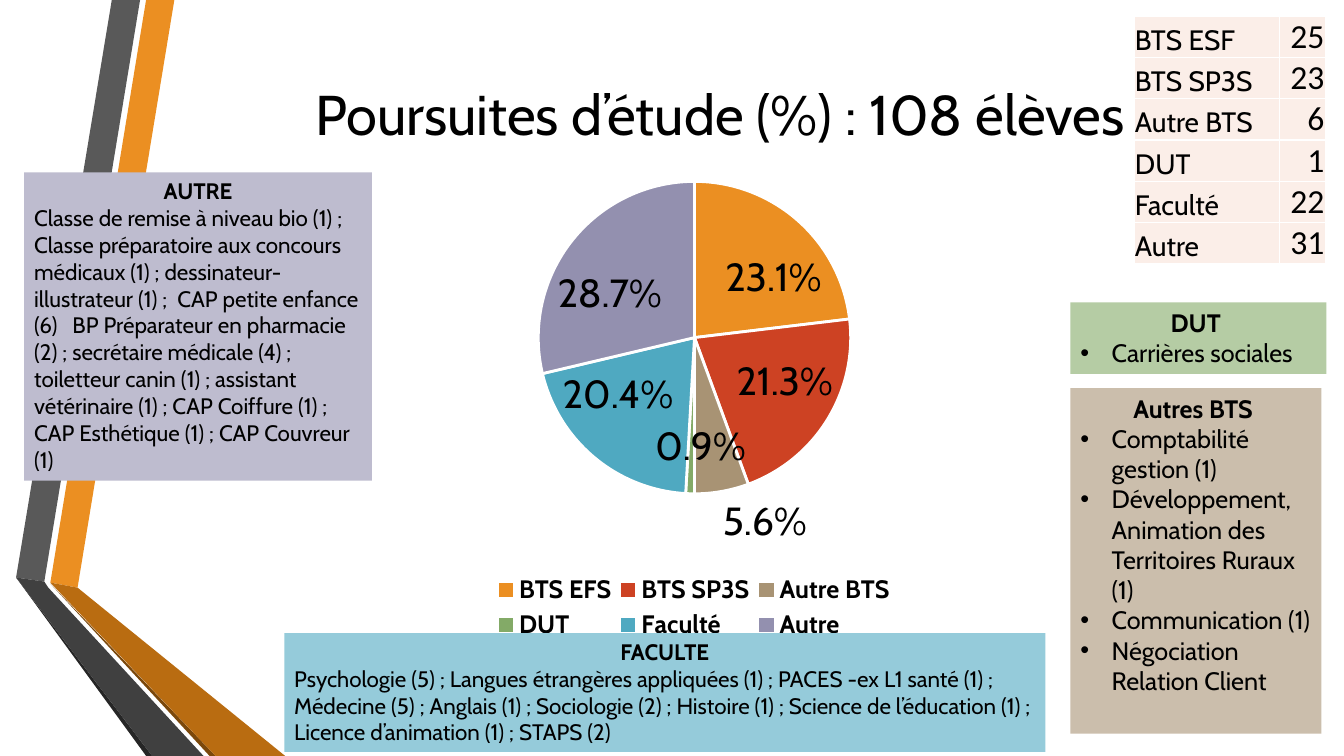
from lxml.etree import SubElement
from pptx import Presentation
from pptx.chart.data import CategoryChartData
from pptx.dml.color import RGBColor
from pptx.enum.chart import XL_CHART_TYPE as ChartType, XL_LABEL_POSITION as LabelPos, XL_LEGEND_POSITION as LegendPos
from pptx.enum.shapes import MSO_SHAPE as Preset
from pptx.enum.text import MSO_ANCHOR as Anchor, MSO_AUTO_SIZE as AutoSize, PP_ALIGN as Align
from pptx.oxml.ns import qn
from pptx.util import Inches, Pt

BANDS = [
    ("EB8F22", [(0.5, 5.78), (0.77, 5.83), (1.73, 0), (1.45, 0)]),
    ("595959", [(1.39, 0), (1.11, 0), (0.16, 5.73), (0.44, 5.77)]),
    ("262626", [(0.16, 5.73), (1.45, 7.5), (1.51, 7.5)]),
    ("7B480B", [(0.5, 5.79), (2.08, 7.5), (2.14, 7.5)]),
    ("B96C11", [(0.5, 5.78), (2.14, 7.5), (2.83, 7.5), (0.77, 5.83)]),
    ("404040", [(2.02, 7.5), (0.48, 5.83), (0.44, 5.77), (0.16, 5.73), (1.51, 7.5)]),
]
COUNTS = [("BTS ESF", 25), ("BTS SP3S", 23), ("Autre BTS", 6), ("DUT", 1), ("Faculté", 22), ("Autre", 31)]
SHARES = [
    ("BTS EFS", 23.1, "EB8F22", LabelPos.INSIDE_END, (0.27, 0.28)),
    ("BTS SP3S", 21.3, "CD4223", LabelPos.INSIDE_END, (0.1, -0.11)),
    ("Autre BTS", 5.6, "A89374", LabelPos.OUTSIDE_END, None),
    ("DUT", 0.9, "83AA67", LabelPos.INSIDE_END, (0.1, -0.18)),
    ("Faculté", 20.4, "4FA9C1", LabelPos.INSIDE_END, (-0.35, -0.35)),
    ("Autre ", 28.7, "9390AF", LabelPos.INSIDE_END, (-0.19, 0.25)),
]
DETAILS = [
    ((0.24, 1.71, 3.45, 3.06), "BEBCCF", 16, False, "AUTRE", [
        "Classe de remise à niveau bio (1) ; Classe préparatoire aux concours médicaux (1) ; "
        "dessinateur-illustrateur (1) ;  CAP petite enfance (6)   BP Préparateur en pharmacie (2) ; "
        "secrétaire médicale (4) ; toiletteur canin (1) ; assistant vétérinaire (1) ; "
        "CAP Coiffure (1) ; CAP Esthétique (1) ; CAP Couvreur (1)"]),
    ((10.62, 3.85, 2.49, 3.43), "CBBEAC", 18, True, "Autres BTS ", [
        "Comptabilité gestion (1)", "Développement, Animation des Territoires Ruraux (1)",
        "Communication (1)", "Négociation Relation Client"]),
    ((2.82, 6.28, 7.55, 1.18), "95CBDA", 16, False, "FACULTE", [
        "Psychologie (5) ; Langues étrangères appliquées (1) ; PACES -ex L1 santé (1) ; "
        "Médecine (5) ; Anglais (1) ; Sociologie (2) ; Histoire (1) ; "
        "Science de l’éducation (1) ; Licence d’animation (1) ; STAPS (2)"]),
    ((10.62, 3, 2.54, 0.71), "B5CCA4", 18, True, "DUT ", ["Carrières sociales"]),
]


def paint(fill, color):
    """Fill with a solid hex colour."""
    fill.solid()
    fill.fore_color.rgb = RGBColor.from_string(color)


def style(font, size, name="Cabin", bold=False):
    """Apply the black text format to a font."""
    for key, value in {"size": Pt(size), "name": name, "bold": bold}.items():
        setattr(font, key, value)
    font.color.rgb = RGBColor.from_string("000000")


def add_bands(slide):
    """Draw the folded ribbons on the left."""
    for color, corners in BANDS:
        start, *others = [(Inches(x), Inches(y)) for x, y in corners]
        builder = slide.shapes.build_freeform(*start)
        builder.add_line_segments(others)
        band = builder.convert_to_shape()
        band.shadow.inherit = False
        paint(band.fill, color)
        band.line.fill.background()


def add_title(slide, box):
    """Place the heading in the title placeholder."""
    heading = slide.shapes.title
    for key, value in zip(("left", "top", "width", "height"), box):
        setattr(heading, key, Inches(value))
    frame = heading.text_frame
    frame.text = "Poursuites d’étude (%) : 108 élèves"
    frame.auto_size, frame.vertical_anchor = AutoSize.NONE, Anchor.MIDDLE
    frame.paragraphs[0].alignment = Align.CENTER
    style(frame.paragraphs[0].runs[0].font, 40)


def set_layout(part, index, chart_size, lengths, **modes):
    """Lay out a chart part by lengths in inches within the chart."""
    for old in part.findall(qn("c:layout")):
        part.remove(old)
    layout = part.makeelement(qn("c:layout"))
    manual = SubElement(layout, qn("c:manualLayout"))
    for key, mode in modes.items():
        SubElement(manual, qn(f"c:{key}"), val=mode)
    for key, length, whole in zip("xywh", lengths, chart_size * 2):
        SubElement(manual, qn(f"c:{key}"), val=f"{length / whole:.4f}")
    part.insert(index, layout)


def add_shares(slide, box):
    """Draw the pie of shares with its legend."""
    data = CategoryChartData(number_format="0.0")
    data.categories = [name for name, *_ in SHARES]
    data.add_series("Series 1", [share for _, share, *_ in SHARES])
    chart = slide.shapes.add_chart(ChartType.PIE, *map(Inches, box), data).chart
    style(chart.font, 10)
    chart.has_title = False
    chart.has_legend = True
    legend = chart.legend
    legend.position, legend.include_in_layout = LegendPos.BOTTOM, False
    style(legend.font, 18, bold=True)
    plot = chart.plots[0]
    plot.vary_by_categories = True
    series = plot.series[0]
    labels = series.data_labels
    for key, value in {"show_value": True, "number_format": "0.0", "number_format_is_linked": False}.items():
        setattr(labels, key, value)
    style(labels.font, 28, bold=True)
    size = box[2:]
    for index, (_, share, color, position, offset) in enumerate(SHARES):
        point = series.points[index]
        paint(point.format.fill, color)
        paint(point.format.line.fill, "FFFFFF")
        point.format.line.width = Pt(2)
        label = point.data_label
        label.text_frame.text = f"{share}%"
        style(label.text_frame.paragraphs[0].runs[0].font, 28)
        label.position = position
        if offset:
            entry = labels._element.findall(qn("c:dLbl"))[index]
            set_layout(entry, 1, size, offset)
    edges = {"xMode": "edge", "yMode": "edge"}
    area, key = (chart.element.find(".//" + qn(tag)) for tag in ("c:plotArea", "c:legend"))
    set_layout(area, 0, size, (2.52, 0.43, 3.1, 3.1), layoutTarget="inner", **edges)
    set_layout(key, 1, size, (2.03, 4.28, 4.07, 0.75), **edges)


def add_counts(slide, box):
    """Build the table of student counts."""
    table = slide.shapes.add_table(len(COUNTS), 2, *map(Inches, box)).table
    table.first_row = table.horz_banding = False
    for column, width in zip(table.columns, (1.44, 0.46)):
        column.width = Inches(width)
    looks = [(Align.LEFT, 20, "Cabin"), (Align.RIGHT, 24, "Calibri")]
    cell_format = {
        "margin_left": Inches(0.01), "margin_right": Inches(0.01),
        "margin_top": 0, "margin_bottom": 0, "vertical_anchor": Anchor.BOTTOM,
    }
    for row, values in enumerate(COUNTS):
        for column, (value, (align, size, font)) in enumerate(zip(values, looks)):
            cell = table.cell(row, column)
            for key, setting in cell_format.items():
                setattr(cell, key, setting)
            cell.text = str(value)
            paragraph = cell.text_frame.paragraphs[0]
            paragraph.alignment = align
            style(paragraph.runs[0].font, size, font)
            paint(cell.fill, "FBEEE8")


def add_detail(slide, box, color, size, bulleted, heading, entries):
    """Draw one coloured box with a heading and its entries."""
    panel = slide.shapes.add_shape(Preset.RECTANGLE, *map(Inches, box))
    panel.shadow.inherit = False
    paint(panel.fill, color)
    panel.line.fill.background()
    frame = panel.text_frame
    frame.word_wrap, frame.vertical_anchor = True, Anchor.TOP
    frame.text = "\n".join([heading, *entries])
    for index, paragraph in enumerate(frame.paragraphs):
        paragraph.alignment = Align.LEFT if index else Align.CENTER
        style(paragraph.runs[0].font, size, bold=index == 0)
        if index and bulleted:
            props = paragraph._p.get_or_add_pPr()
            props.set("marL", str(Inches(0.31)))
            props.set("indent", str(-Inches(0.31)))
            SubElement(props, qn("a:buFont"), typeface="Arial")
            SubElement(props, qn("a:buChar"), char="•")


def main():
    """Build and save the slide."""
    deck = Presentation()
    deck.slide_width, deck.slide_height = Inches(40 / 3), Inches(7.5)
    slide = deck.slides.add_slide(deck.slide_layouts[5])
    add_bands(slide)
    add_title(slide, (1.66, 0.16, 10.96, 1.92))
    add_shares(slide, (2.82, 1.37, 8.14, 5.03))
    add_counts(slide, (11.25, 0.16, 1.9, 2.46))
    for detail in DETAILS:
        add_detail(slide, *detail)
    deck.save("out.pptx")


if __name__ == "__main__":
    main()
